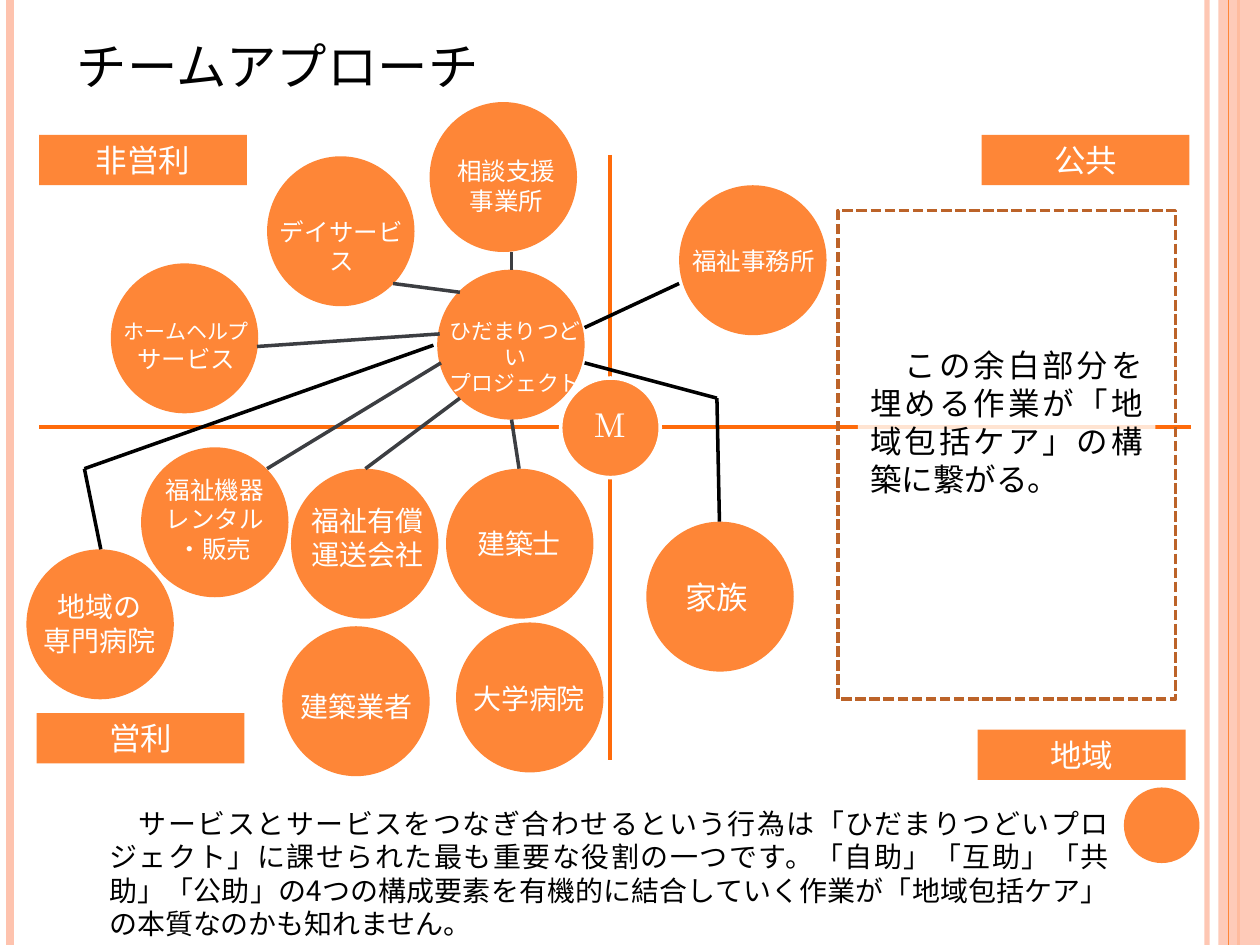
from dataclasses import dataclass

from lxml import etree
from pptx import Presentation
from pptx.dml.color import RGBColor
from pptx.enum.dml import MSO_LINE
from pptx.enum.shapes import MSO_CONNECTOR, MSO_SHAPE
from pptx.enum.text import MSO_ANCHOR, PP_ALIGN
from pptx.oxml.ns import qn
from pptx.util import Inches, Pt

RECTANGLE, OVAL = MSO_SHAPE.RECTANGLE, MSO_SHAPE.OVAL
STRAIGHT = MSO_CONNECTOR.STRAIGHT
LEFT, CENTER, JUSTIFY = PP_ALIGN.LEFT, PP_ALIGN.CENTER, PP_ALIGN.JUSTIFY
TOP, BOTTOM = MSO_ANCHOR.TOP, MSO_ANCHOR.BOTTOM
DASHED = MSO_LINE.SQUARE_DOT

GOTHIC, SERIF = "Noto Sans CJK JP", "Cambria"
ORANGE, AXIS, PEACH, BROWN = "FE8637", "FF6B0A", "FEC3AE", "BC6329"
WHITE, BLACK, GRAY = "FFFFFF", "000000", "3C3E42"
CIRCLE_WIDTH, CIRCLE_HEIGHT = 1.17, 1.19


@dataclass
class Area:
    left: float
    top: float
    width: float
    height: float

    def lengths(self) -> list:
        return [Inches(v) for v in (self.left, self.top, self.width, self.height)]


@dataclass
class Member:
    left: float
    top: float
    text: str
    label: Area
    sizes: tuple


@dataclass
class Line:
    points: tuple
    color: str
    width: float = 2
    alpha: int = 100


MEMBERS = [
    Member(5.13, 4.14, "家族", Area(5.28, 4.54, 0.82, 0.4), (18,)),
    Member(0.21, 4.36, "地域の\n専門病院", Area(0.22, 4.63, 1.14, 0.64), (16, 16)),
    Member(1.12, 3.55, "福祉機器\nレンタル\n・販売", Area(1.12, 3.72, 1.17, 0.81), (14, 14, 14)),
    Member(2.31, 3.72, "福祉有償運送会社", Area(2.33, 3.95, 1.17, 0.64), (16,)),
    Member(5.39, 1.47, "福祉事務所", Area(5.35, 1.9, 1.26, 0.34), (14,)),
    Member(3.41, 0.81, "相談支援\n事業所", Area(3.39, 1.19, 1.26, 0.57), (14, 14)),
    Member(3.47, 2.14, "ひだまりつどい\nプロジェクト", Area(3.44, 2.47, 1.3, 0.54), (12.5, 12.5)),
    Member(3.54, 3.72, "建築士", Area(3.55, 4.13, 1.14, 0.37), (16,)),
    Member(2.12, 1.24, "デイサービス", Area(2.08, 1.67, 1.26, 0.34), (14,)),
    Member(0.88, 2.09, "ホームヘルプ\nサービス", Area(0.8, 2.48, 1.36, 0.54), (12, 14)),
    Member(3.62, 4.94, "大学病院", Area(3.63, 5.36, 1.14, 0.37), (16,)),
    Member(2.24, 4.97, "建築業者", Area(2.26, 5.42, 1.14, 0.37), (16,)),
]
SECTORS = [(7.79, 1.07, "公共"), (0.31, 1.07, "非営利"), (0.29, 5.66, "営利"), (7.76, 5.79, "地域")]
BORDER_LINES = [
    Line(((9.58, 0), (9.58, 7.5)), PEACH, 3, 93),
    Line(((0.08, 0), (0.08, 7.5)), PEACH, 4.5),
    Line(((9.83, 0), (9.83, 7.5)), ORANGE, 1.5),
]
BAND_LINE = Line(((9.75, 0), (9.75, 7.5)), ORANGE, 0.75)
AXES = [Line(((0.31, 3.39), (9.45, 3.39)), AXIS), Line(((4.84, 1.23), (4.84, 6.03)), AXIS)]
LINKS = [
    Line(((4.06, 2), (4.06, 2.14)), GRAY),
    Line(((3.12, 2.25), (3.65, 2.32)), GRAY),
    Line(((2.04, 2.75), (3.49, 2.65)), GRAY),
    Line(((2.12, 3.72), (3.5, 2.88)), GRAY),
    Line(((2.9, 3.72), (3.65, 3.16)), GRAY),
    Line(((4.12, 3.72), (4.06, 3.33)), GRAY),
    Line(((3.44, 2.74), (0.67, 3.72), (0.8, 4.36)), BLACK),
    Line(((4.64, 2.6), (5.39, 2.25)), BLACK),
    Line(((4.64, 2.88), (5.69, 3.16), (5.71, 4.14)), BLACK),
]


def paint(color_format, color: str, alpha: int = 100) -> None:
    color_format.rgb = RGBColor.from_string(color)
    if alpha < 100:
        for node in color_format._xFill.iter(qn("a:srgbClr")):
            etree.SubElement(node, qn("a:alpha")).set("val", str(alpha * 1000))


def write(shape, text: str, sizes: tuple, color: str = WHITE, align=CENTER,
          font: str = GOTHIC, anchor=TOP) -> None:
    frame = shape.text_frame
    frame.word_wrap = True
    frame.vertical_anchor = anchor
    frame.text = text
    for para, size in zip(frame.paragraphs, sizes):
        para.alignment = align
        for span in para.runs:
            span.font.size = Pt(size)
            span.font.name = font
            paint(span.font.color, color)
            etree.SubElement(span.font._element, qn("a:ea")).set("typeface", font)


def add_label(page, area: Area, text: str, sizes: tuple, **style):
    box = page.shapes.add_textbox(*area.lengths())
    write(box, text, sizes, **style)
    return box


def add_figure(page, kind, area: Area, fill: str = ORANGE, alpha: int = 100):
    shape = page.shapes.add_shape(kind, *area.lengths())
    shape.shadow.inherit = False
    shape.fill.solid()
    paint(shape.fill.fore_color, fill, alpha)
    shape.line.fill.background()
    return shape


def outline(shape, color: str) -> None:
    shape.line.width = Pt(2)
    paint(shape.line.color, color)


def add_line(page, line: Line) -> None:
    for start, end in zip(line.points, line.points[1:]):
        connector = page.shapes.add_connector(STRAIGHT, *[Inches(v) for v in start + end])
        connector.line.width = Pt(line.width)
        connector.line.fill.solid()
        paint(connector.line.fill.fore_color, line.color, line.alpha)
        etree.SubElement(connector._element.spPr, qn("a:effectLst"))


def add_member(page, member: Member) -> None:
    add_figure(page, OVAL, Area(member.left, member.top, CIRCLE_WIDTH, CIRCLE_HEIGHT))
    add_label(page, member.label, member.text, member.sizes)


def main() -> None:
    deck = Presentation()
    deck.slide_width, deck.slide_height = Inches(10), Inches(7.5)
    page = deck.slides.add_slide(deck.slide_layouts[5])

    for line in BORDER_LINES:
        add_line(page, line)
    add_figure(page, RECTANGLE, Area(9.67, 0, 0.33, 7.5), PEACH, 87)
    add_line(page, BAND_LINE)
    add_figure(page, OVAL, Area(8.92, 6.25, 0.6, 0.6))

    title = page.shapes.title
    title.left, title.top, title.width, title.height = Area(0.51, -0.42, 8.17, 1.25).lengths()
    write(title, "チームアプローチ", (36,), BLACK, LEFT, anchor=BOTTOM)
    title.text_frame.paragraphs[0].runs[0].font._element.set("cap", "small")

    summary = add_label(
        page, Area(0.77, 6.35, 8.14, 0.84),
        "\u3000サービスとサービスをつなぎ合わせるという行為は「ひだまりつどいプロジェクト」に"
        "課せられた最も重要な役割の一つです。「自助」「互助」「共助」「公助」の4つの構成要素を"
        "有機的に結合していく作業が「地域包括ケア」の本質なのかも知れません。",
        (16,), color=BLACK, align=JUSTIFY)
    summary.text_frame.paragraphs[0].space_before = Pt(6)

    for line in AXES:
        add_line(page, line)
    outline(add_figure(page, OVAL, Area(4.45, 3, 0.79, 0.79)), WHITE)
    add_label(page, Area(4.57, 3.17, 0.55, 0.4), "Ｍ", (18,), font=SERIF)

    for left, top, name in SECTORS:
        write(add_figure(page, RECTANGLE, Area(left, top, 1.65, 0.4)), name, (18,))
    for member in MEMBERS:
        add_member(page, member)
    for line in LINKS:
        add_line(page, line)

    frame = add_figure(page, RECTANGLE, Area(6.65, 1.67, 2.68, 3.88))
    frame.fill.background()
    outline(frame, BROWN)
    frame.line.dash_style = DASHED
    note = add_figure(page, RECTANGLE, Area(6.81, 2.7, 2.36, 1.31), WHITE, 82)
    write(note, "\u3000この余白部分を埋める作業が「地域包括ケア」の構築に繋がる。",
          (18,), BLACK, JUSTIFY)

    deck.save("out.pptx")


if __name__ == "__main__":
    main()
